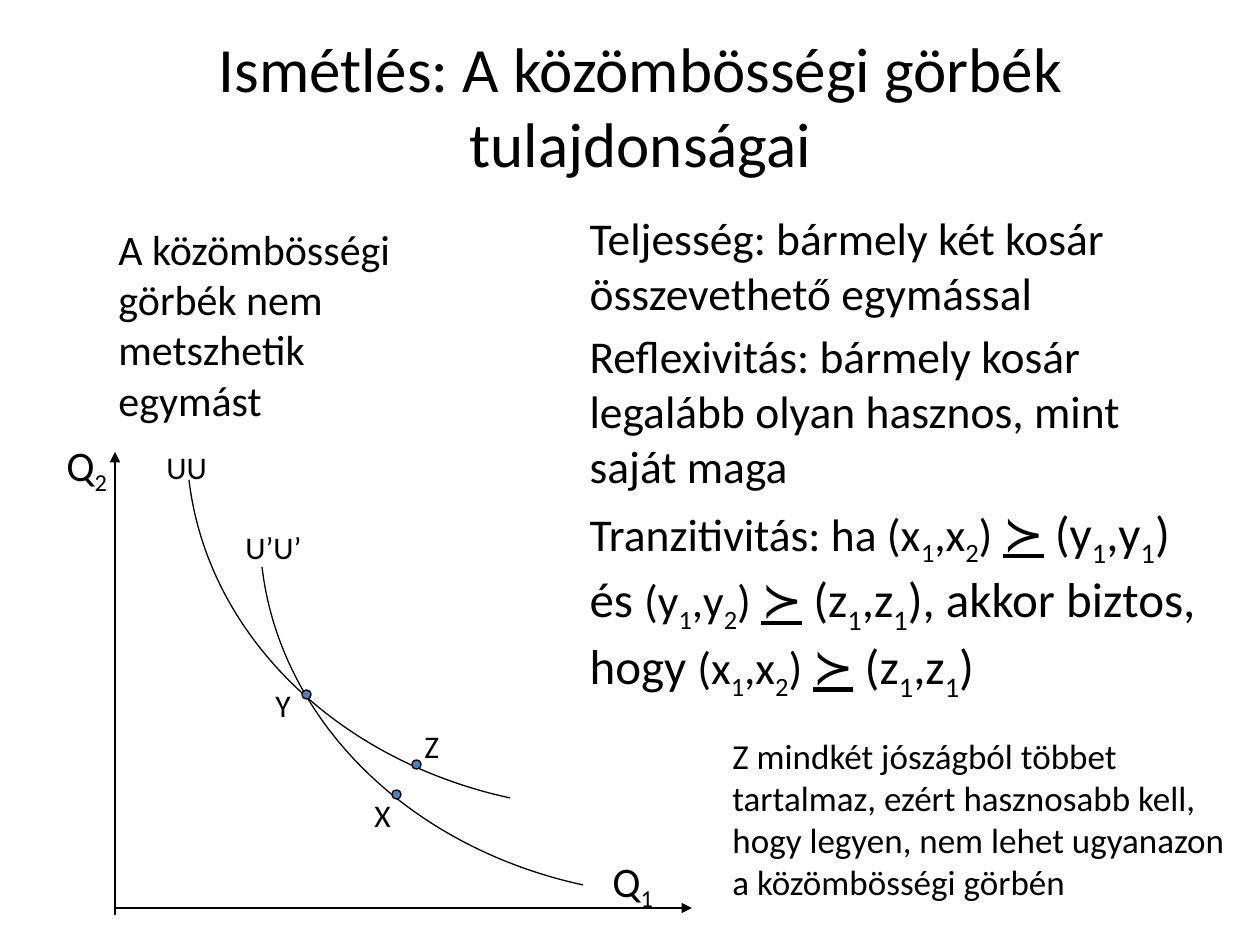
from dataclasses import dataclass

from pptx import Presentation, util as u
from pptx.dml.color import RGBColor
from pptx.enum import shapes, text
from pptx.oxml import ns, xmlchemy

SCALE = u.Inches(1) / 126  # EMU in one px


@dataclass(frozen=True)
class Theme:
    font: str = "Calibri"
    ink: RGBColor = RGBColor(0x00, 0x00, 0x00)
    dot: RGBColor = RGBColor(0x4F, 0x81, 0xBD)
    title: int = 36
    large: int = 28
    body: int = 26
    axis: int = 24
    note: int = 20
    label: int = 18
    line: float = 0.75


THEME = Theme()


def px(*lengths):
    return [u.Emu(round(length * SCALE)) for length in lengths]


def add_span(para, words, size, underline=None, subscript=False):
    span = para.add_run()
    span.text = words
    span.font.name, span.font.size = THEME.font, u.Pt(size)
    span.font.color.rgb = THEME.ink
    span.font.underline = underline
    if subscript:
        span.font._element.set("baseline", "-25000")


def write(box, paragraphs, size, align=text.PP_ALIGN.LEFT,
          anchor=text.MSO_ANCHOR.TOP, indent=0):
    """Each paragraph is a string or a list of (string, size); _ lowers the next character."""
    frame = box.text_frame
    frame.word_wrap = True
    frame.auto_size = text.MSO_AUTO_SIZE.NONE
    frame.vertical_anchor = anchor
    for number, content in enumerate(paragraphs):
        para = frame.add_paragraph() if number else frame.paragraphs[0]
        para.alignment = align
        properties = para._p.get_or_add_pPr()
        properties.set("marL", str(px(indent)[0]))
        properties.set("indent", "0")
        properties.append(xmlchemy.OxmlElement("a:buNone"))
        pieces = [(content, size)] if isinstance(content, str) else content
        for words, points in pieces:
            first, *lowered = words.split("_")
            if first:
                add_span(para, first, points, underline=True if first == "≻" else None)
            for part in lowered:
                add_span(para, part[0], points, subscript=True)
                if part[1:]:
                    add_span(para, part[1:], points)


def add_text(page, bounds, words, size, **style):
    write(page.shapes.add_textbox(*px(*bounds)), [words], size, **style)


def fill_placeholder(holder, bounds, paragraphs, size, **style):
    holder.left, holder.top, holder.width, holder.height = px(*bounds)
    write(holder, paragraphs, size, **style)


def draw_outline(shape):
    shape.line.color.rgb = THEME.ink
    shape.line.width = u.Pt(THEME.line)


def add_axis(page, start, end):
    axis = page.shapes.add_connector(shapes.MSO_CONNECTOR.STRAIGHT, *px(*start, *end))
    draw_outline(axis)
    head = xmlchemy.OxmlElement("a:tailEnd")
    head.set("type", "triangle")
    axis.line._get_or_add_ln().append(head)
    axis._element.spPr.append(xmlchemy.OxmlElement("a:effectLst"))


def add_curve(page, points):
    """Four points: start, two controls, end of one Bézier arc."""
    builder = page.shapes.build_freeform(*points[0], scale=SCALE)
    builder.add_line_segments(points[1:], close=False)
    curve = builder.convert_to_shape()
    curve.shadow.inherit = False
    curve.fill.background()
    draw_outline(curve)
    # Turn the three straight segments into one cubic arc
    segments = list(curve._element.iter(ns.qn("a:lnTo")))
    arc = xmlchemy.OxmlElement("a:cubicBezTo")
    segments[0].addprevious(arc)
    for segment in segments:
        arc.append(segment[0])
        segment.getparent().remove(segment)


def add_dot(page, left, top, size=9):
    dot = page.shapes.add_shape(shapes.MSO_SHAPE.OVAL, *px(left, top, size, size))
    dot.shadow.inherit = False
    dot.fill.solid()
    dot.fill.fore_color.rgb = THEME.dot
    draw_outline(dot)


def add_diagram(page, bounds):
    left, top, width, height = bounds

    def at(x, y):
        return left + x, top + y

    # Axes
    add_axis(page, at(61, height), at(61, 19))
    add_axis(page, at(61, height - 7), at(width, height - 7))

    # Two curves of the same form, the second one shifted
    arc = [(456, 365), (281, 327), (153, 200), (135, 47)]
    for right, down in [(0, 0), (73, 87)]:
        add_curve(page, [at(x + right, y + down) for x, y in arc])

    # Baskets
    for place in [(358, 327), (338, 357), (248, 257)]:
        add_dot(page, *at(*place))

    # Names of baskets, curves and axes
    for words, x, y, wide in [("Z", 358, 288, 53), ("X", 308, 357, 53), ("Y", 209, 247, 53),
                              ("UU", 100, 9, 79), ("U’U’", 179, 89, 139)]:
        add_text(page, (*at(x, y), wide, 50), words, THEME.label)
    for words, x, y in [("Q_2", 0, 0), ("Q_1", 546, 416)]:
        add_text(page, (*at(x, y), 147, 63), words, THEME.axis)


def add_axioms(holder, bounds):
    body, large = THEME.body, THEME.large
    transitivity = [
        ("Tranzitivitás: ha (x_1,x_2) ", body), ("≻", large), (" (y_1,y_1) és ", large),
        ("(y_1,y_2) ", body), ("≻", large), (" (z_1,z_1), akkor biztos, hogy ", large),
        ("(x_1,x_2) ", body), ("≻", large), (" (z_1,z_1)", large),
    ]
    fill_placeholder(holder, bounds, [
        "Teljesség: bármely két kosár összevethető egymással",
        "Reflexivitás: bármely kosár legalább olyan hasznos, mint saját maga",
        transitivity,
    ], body, indent=47)


def main():
    deck = Presentation()
    deck.slide_width, deck.slide_height = px(1260, 945)
    page = deck.slides.add_slide(deck.slide_layouts[1])

    fill_placeholder(page.shapes.title, (105, 26, 1071, 158),
                     ["Ismétlés: A közömbösségi görbék tulajdonságai"], THEME.title,
                     align=text.PP_ALIGN.CENTER, anchor=text.MSO_ANCHOR.MIDDLE)
    add_axioms(page.placeholders[1], (530, 204, 694, 501))
    add_diagram(page, (54, 433, 638, 482))

    # Remarks beside the diagram
    add_text(page, (106, 217, 324, 217),
             "A közömbösségi görbék nem metszhetik egymást", THEME.axis)
    add_text(page, (673, 728, 572, 238),
             "Z mindkét jószágból többet tartalmaz, ezért hasznosabb kell, "
             "hogy legyen, nem lehet ugyanazon a közömbösségi görbén",
             THEME.note, indent=47)
    deck.save("out.pptx")


if __name__ == "__main__":
    main()
